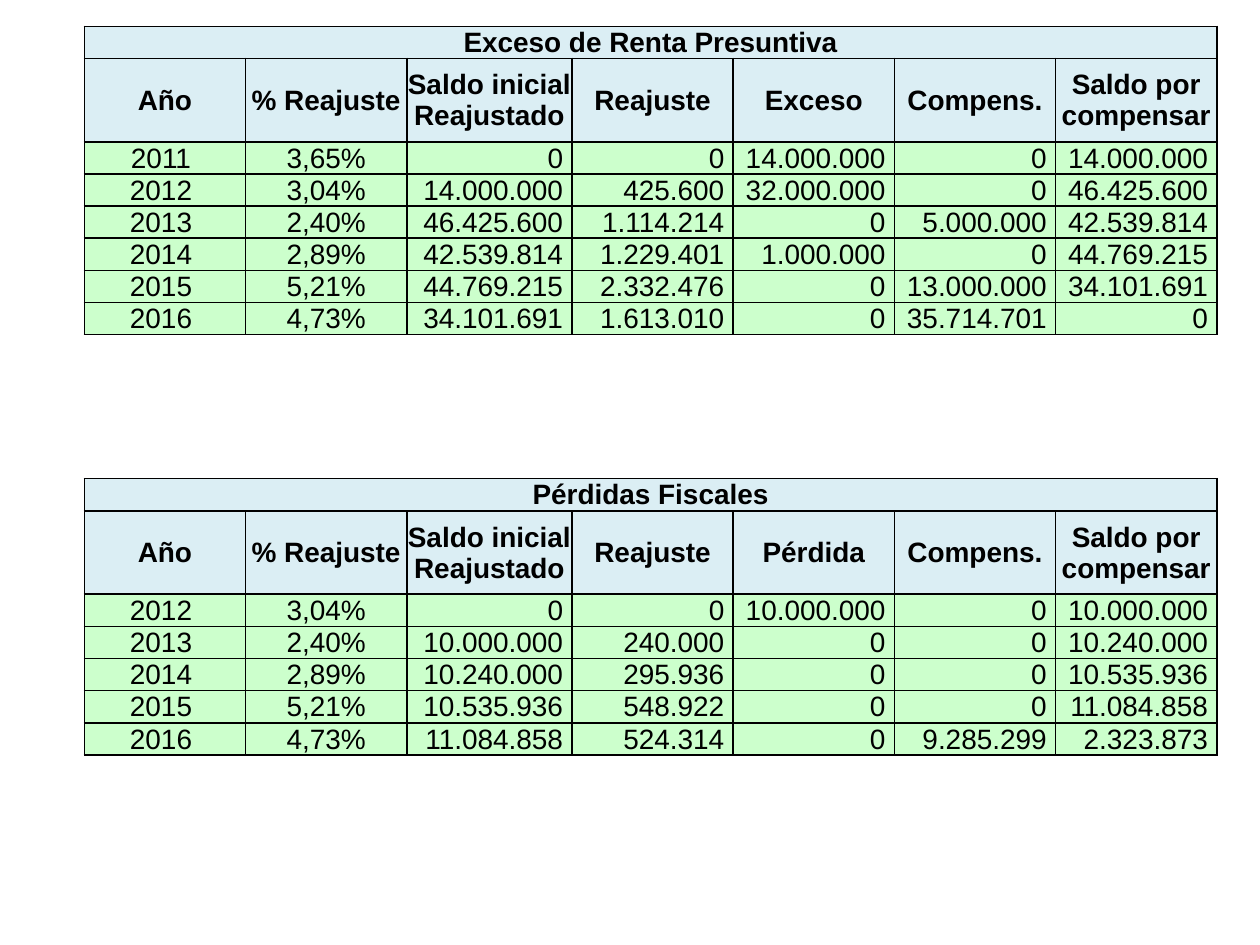
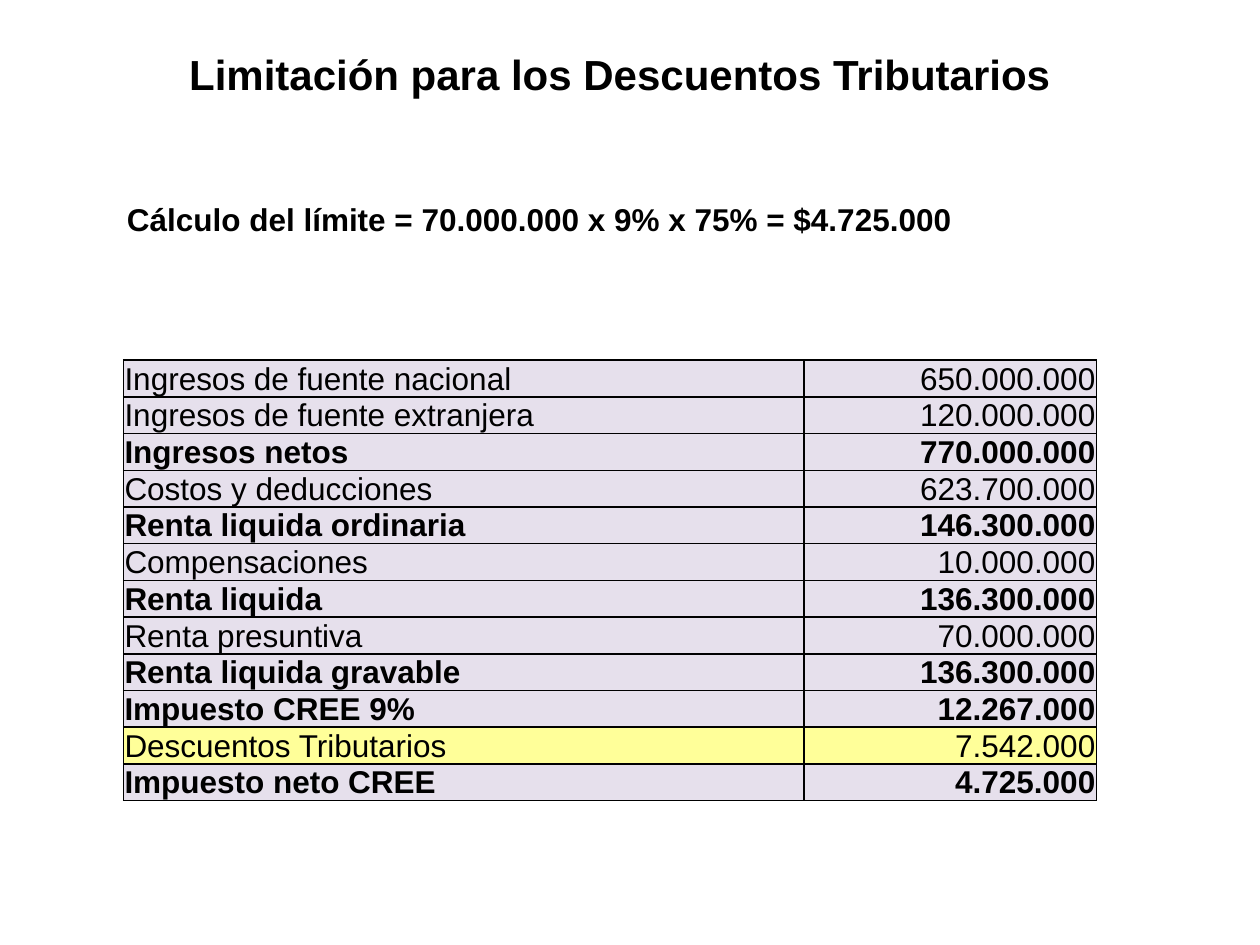
from dataclasses import dataclass

from lxml import etree
from pptx import Presentation
from pptx.dml.color import RGBColor
from pptx.enum.shapes import MSO_SHAPE
from pptx.enum.text import MSO_ANCHOR, MSO_AUTO_SIZE, PP_ALIGN
from pptx.oxml.ns import qn
from pptx.util import Cm, Pt

LEFT, CENTER, RIGHT = PP_ALIGN.LEFT, PP_ALIGN.CENTER, PP_ALIGN.RIGHT
MIDDLE, BOTTOM = MSO_ANCHOR.MIDDLE, MSO_ANCHOR.BOTTOM
NO_AUTOFIT = MSO_AUTO_SIZE.NONE
RECTANGLE = MSO_SHAPE.RECTANGLE
TITLE_ONLY_LAYOUT, BLANK_LAYOUT = 5, 6


@dataclass(frozen=True)
class Theme:
    font: str = "Arial"
    ink: str = "000000"
    paper: str = "FFFFFF"
    header: str = "DBEEF4"
    balance: str = "CCFFCC"
    tax: str = "E6E0EC"
    highlight: str = "FFFF99"
    title_size: int = 24
    body_size: int = 18
    balance_size: int = 16
    border: int = 1


@dataclass(frozen=True)
class Box:
    left: float
    top: float
    width: float
    height: float


@dataclass(frozen=True)
class BalanceTable:
    title: str
    movement: str
    top: float
    rows: tuple[tuple[str, ...], ...]


@dataclass(frozen=True)
class TaxLine:
    label: str
    amount: str
    bold: bool = False
    fill: str = Theme.tax


THEME = Theme()
BALANCE_LEFT = 1.7
BALANCE_COLUMNS = (3.25, 3.25, 3.33, 3.25, 3.25, 3.25, 3.25)
TITLE_ROW, HEADER_ROW, DATA_ROW = 0.56, 1.68, 0.53
TAX_LEFT, TAX_TOP = 2.49, 7.26
TAX_COLUMNS = (13.72, 5.89)
TAX_ROW = 0.74
CELL_INSET, AMOUNT_INSET = 0.02, 0.18
RATES = {"2011": "3,65%", "2012": "3,04%", "2013": "2,40%",
         "2014": "2,89%", "2015": "5,21%", "2016": "4,73%"}

BALANCE_TABLES = (
    BalanceTable("Exceso de Renta Presuntiva", "Exceso", 0.53, (
        ("2011", "0", "0", "14.000.000", "0", "14.000.000"),
        ("2012", "14.000.000", "425.600", "32.000.000", "0", "46.425.600"),
        ("2013", "46.425.600", "1.114.214", "0", "5.000.000", "42.539.814"),
        ("2014", "42.539.814", "1.229.401", "1.000.000", "0", "44.769.215"),
        ("2015", "44.769.215", "2.332.476", "0", "13.000.000", "34.101.691"),
        ("2016", "34.101.691", "1.613.010", "0", "35.714.701", "0"),
    )),
    BalanceTable("Pérdidas Fiscales", "Pérdida", 9.65, (
        ("2012", "0", "0", "10.000.000", "0", "10.000.000"),
        ("2013", "10.000.000", "240.000", "0", "0", "10.240.000"),
        ("2014", "10.240.000", "295.936", "0", "0", "10.535.936"),
        ("2015", "10.535.936", "548.922", "0", "0", "11.084.858"),
        ("2016", "11.084.858", "524.314", "0", "9.285.299", "2.323.873"),
    )),
)

TAX_LINES = (
    TaxLine("Ingresos de fuente nacional", "650.000.000"),
    TaxLine("Ingresos de fuente extranjera", "120.000.000"),
    TaxLine("Ingresos netos", "770.000.000", bold=True),
    TaxLine("Costos y deducciones", "623.700.000"),
    TaxLine("Renta liquida ordinaria", "146.300.000", bold=True),
    TaxLine("Compensaciones", "10.000.000"),
    TaxLine("Renta liquida", "136.300.000", bold=True),
    TaxLine("Renta presuntiva", "70.000.000"),
    TaxLine("Renta liquida gravable", "136.300.000", bold=True),
    TaxLine("Impuesto CREE 9%", "12.267.000", bold=True),
    TaxLine("Descuentos Tributarios", "7.542.000", fill=THEME.highlight),
    TaxLine("Impuesto neto CREE", "4.725.000", bold=True),
)


def write_text(text_frame, text: str, *, size: int, bold: bool = False,
               align=LEFT) -> None:
    text_frame.word_wrap = True
    paragraph = text_frame.paragraphs[0]
    paragraph.alignment = align
    run = paragraph.add_run()
    run.text = text
    run.font.name = THEME.font
    run.font.size = Pt(size)
    run.font.bold = bold
    run.font.color.rgb = RGBColor.from_string(THEME.ink)


def paint(target, color: str) -> None:
    target.fill.solid()
    target.fill.fore_color.rgb = RGBColor.from_string(color)


def add_borders(cell) -> None:
    properties = cell._tc.get_or_add_tcPr()
    for position, side in enumerate(("lnL", "lnR", "lnT", "lnB")):
        line = etree.Element(qn(f"a:{side}"), w=str(Pt(THEME.border)))
        fill = etree.SubElement(line, qn("a:solidFill"))
        etree.SubElement(fill, qn("a:srgbClr"), val=THEME.ink)
        properties.insert(position, line)


def add_grid(slide, left: float, top: float, columns: tuple[float, ...],
             rows: list[float]):
    table = slide.shapes.add_table(
        len(rows), len(columns), Cm(left), Cm(top),
        Cm(sum(columns)), Cm(sum(rows))).table
    table.first_row = False
    table.horz_banding = False
    for column, width in zip(table.columns, columns):
        column.width = Cm(width)
    for row, height in zip(table.rows, rows):
        row.height = Cm(height)
    return table


def format_cell(cell, fill: str, *, anchor=BOTTOM,
                right_inset: float = CELL_INSET) -> None:
    cell.margin_left = cell.margin_top = Cm(CELL_INSET)
    cell.margin_right = Cm(right_inset)
    cell.margin_bottom = 0
    cell.vertical_anchor = anchor
    paint(cell, fill)
    add_borders(cell)


def add_balance_table(slide, balance: BalanceTable) -> None:
    heights = [TITLE_ROW, HEADER_ROW] + [DATA_ROW] * len(balance.rows)
    table = add_grid(slide, BALANCE_LEFT, balance.top, BALANCE_COLUMNS, heights)
    headers = ("Año", "% Reajuste", "Saldo inicial Reajustado", "Reajuste",
               balance.movement, "Compens.", "Saldo por compensar")
    for index, header in enumerate(headers):
        format_cell(table.cell(0, index), THEME.header)
        cell = table.cell(1, index)
        format_cell(cell, THEME.header, anchor=MIDDLE)
        write_text(cell.text_frame, header, size=THEME.balance_size,
                   bold=True, align=CENTER)
    table.cell(0, 0).merge(table.cell(0, len(headers) - 1))
    write_text(table.cell(0, 0).text_frame, balance.title,
               size=THEME.balance_size, bold=True, align=CENTER)
    for row_index, (year, *amounts) in enumerate(balance.rows, start=2):
        for index, value in enumerate((year, RATES[year], *amounts)):
            cell = table.cell(row_index, index)
            format_cell(cell, THEME.balance,
                        right_inset=CELL_INSET if index == 1 else AMOUNT_INSET)
            write_text(cell.text_frame, value, size=THEME.balance_size,
                       align=CENTER if index < 2 else RIGHT)


def add_tax_table(slide) -> None:
    table = add_grid(slide, TAX_LEFT, TAX_TOP, TAX_COLUMNS,
                     [TAX_ROW] * len(TAX_LINES))
    for row_index, line in enumerate(TAX_LINES):
        for index, (text, align) in enumerate(
                ((line.label, LEFT), (line.amount, RIGHT))):
            cell = table.cell(row_index, index)
            format_cell(cell, line.fill)
            write_text(cell.text_frame, text, size=THEME.body_size,
                       bold=line.bold, align=align)


def place_heading(shape, box: Box, text: str, *, size: int, align) -> None:
    shape.left, shape.top = Cm(box.left), Cm(box.top)
    shape.width, shape.height = Cm(box.width), Cm(box.height)
    paint(shape, THEME.paper)
    shape.line.fill.background()
    shape.text_frame.auto_size = NO_AUTOFIT
    shape.text_frame.vertical_anchor = MIDDLE
    write_text(shape.text_frame, text, size=size, bold=True, align=align)


def build_balances(presentation) -> None:
    slide = presentation.slides.add_slide(
        presentation.slide_layouts[BLANK_LAYOUT])
    for balance in BALANCE_TABLES:
        add_balance_table(slide, balance)


def build_tax_limit(presentation) -> None:
    slide = presentation.slides.add_slide(
        presentation.slide_layouts[TITLE_ONLY_LAYOUT])
    place_heading(slide.shapes.title, Box(3.3, 0.43, 18.39, 2.11),
                  "Limitación para los Descuentos Tributarios",
                  size=THEME.title_size, align=CENTER)
    formula = slide.shapes.add_shape(RECTANGLE, 0, 0, 0, 0)
    formula.shadow.inherit = False
    place_heading(formula, Box(2.31, 3.91, 18.29, 1.02),
                  "Cálculo del límite = 70.000.000 x 9% x 75% = $4.725.000",
                  size=THEME.body_size, align=LEFT)
    add_tax_table(slide)


def main() -> None:
    presentation = Presentation()
    presentation.slide_width = Cm(25.4)
    presentation.slide_height = Cm(19.05)
    build_balances(presentation)
    build_tax_limit(presentation)
    presentation.save("out.pptx")


if __name__ == "__main__":
    main()
